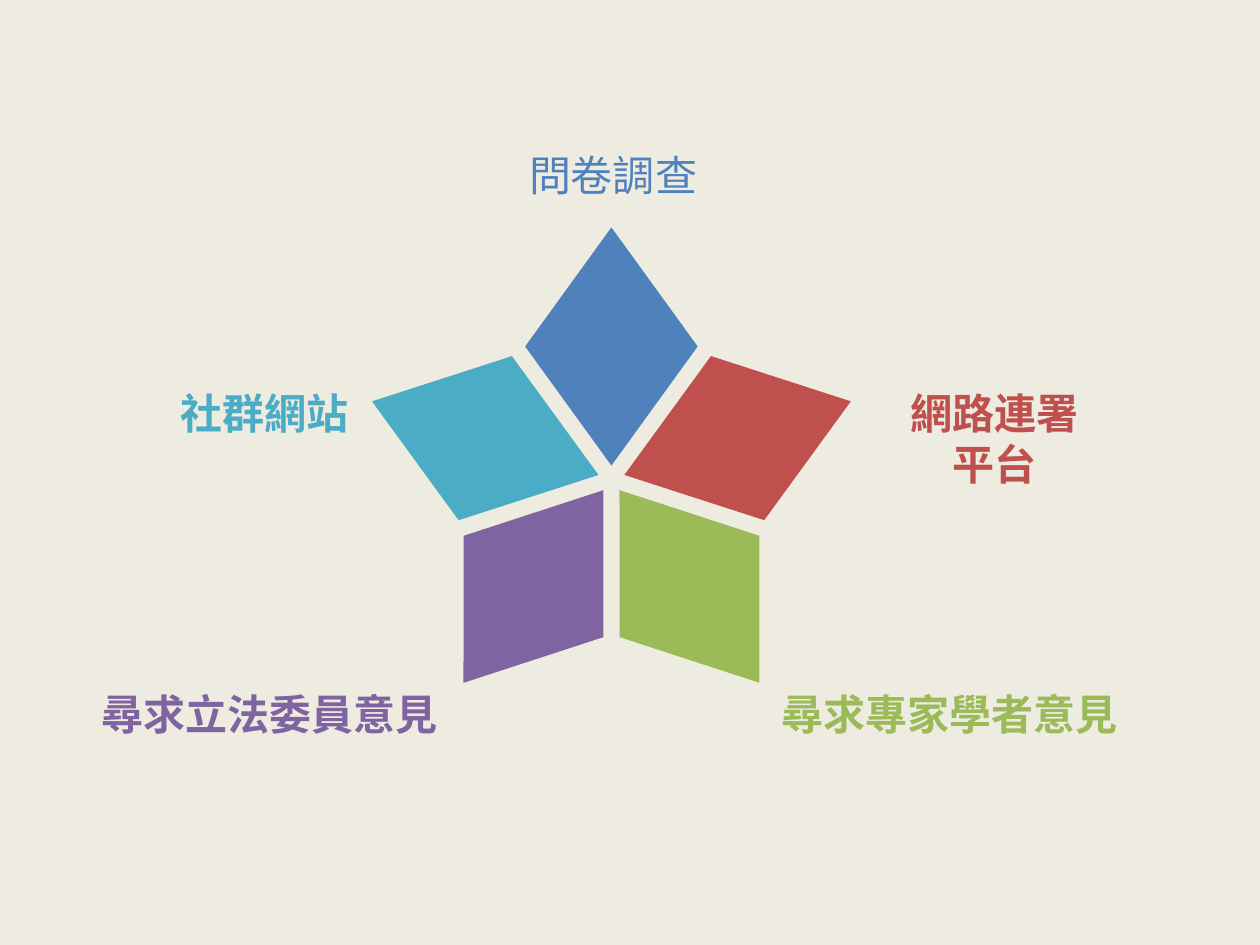
import math

from lxml import etree
from pptx import Presentation, util as u
from pptx.dml.color import RGBColor
from pptx.enum import shapes, text
from pptx.oxml.ns import qn

FONT = "Noto Sans CJK SC"
CREAM = RGBColor(0xEE, 0xEC, 0xE1)
BLUE = RGBColor(0x4F, 0x81, 0xBD)
RED = RGBColor(0xC0, 0x50, 0x4D)
GREEN = RGBColor(0x9B, 0xBB, 0x59)
PURPLE = RGBColor(0x80, 0x64, 0xA2)
TEAL = RGBColor(0x4B, 0xAC, 0xC6)

# Clockwise from the top: lines, colour, bold, label box (left, top, width, height)
CHANNELS = [
    (["問卷調查"], BLUE, False, (232.6, 82, 235.4, 36)),
    (["網路連署", "平台"], RED, True, (491.8, 218, 152.6, 65.5)),
    (["尋求專家學者意見"], GREEN, True, (426.2, 390.2, 233.3, 36)),
    (["尋求立法委員意見"], PURPLE, True, (46.5, 390.2, 214.6, 36)),
    (["社群網站"], TEAL, True, (74.9, 218, 152.6, 36)),
]

CENTRE_X, CENTRE_Y = 349.4, 273.8
RADIUS = 75.8
PETAL_W, PETAL_H = 98.6, 136.1


def add_petal(slide, index, colour):
    turn = 360 / len(CHANNELS) * index
    x = CENTRE_X + RADIUS * math.sin(math.radians(turn))
    y = CENTRE_Y - RADIUS * math.cos(math.radians(turn))
    petal = slide.shapes.add_shape(
        shapes.MSO_SHAPE.DIAMOND,
        u.Pt(x - PETAL_W / 2), u.Pt(y - PETAL_H / 2), u.Pt(PETAL_W), u.Pt(PETAL_H))
    petal.rotation = turn
    petal.shadow.inherit = False
    petal.fill.solid()
    petal.fill.fore_color.rgb = colour
    petal.line.fill.background()


def add_label(slide, lines, box, *, colour, bold, size=24):
    label = slide.shapes.add_textbox(*map(u.Pt, box))
    frame = label.text_frame
    frame.word_wrap = True
    frame.auto_size = text.MSO_AUTO_SIZE.SHAPE_TO_FIT_TEXT
    for number, line in enumerate(lines):
        paragraph = frame.add_paragraph() if number else frame.paragraphs[0]
        paragraph.alignment = text.PP_ALIGN.CENTER
        run = paragraph.add_run()
        run.text = line
        run.font.name = FONT
        run.font.size = u.Pt(size)
        run.font.bold = bold
        run.font.color.rgb = colour
        # East Asian characters take their typeface from a:ea
        etree.SubElement(run.font._element, qn("a:ea"), typeface=FONT)


def main():
    deck = Presentation()
    deck.slide_width, deck.slide_height = u.Pt(720), u.Pt(540)
    slide = deck.slides.add_slide(deck.slide_layouts[6])
    slide.background.fill.solid()
    slide.background.fill.fore_color.rgb = CREAM
    for index, (lines, colour, bold, box) in enumerate(CHANNELS):
        add_petal(slide, index, colour)
        add_label(slide, lines, box, colour=colour, bold=bold)
    deck.save("out.pptx")


if __name__ == "__main__":
    main()
